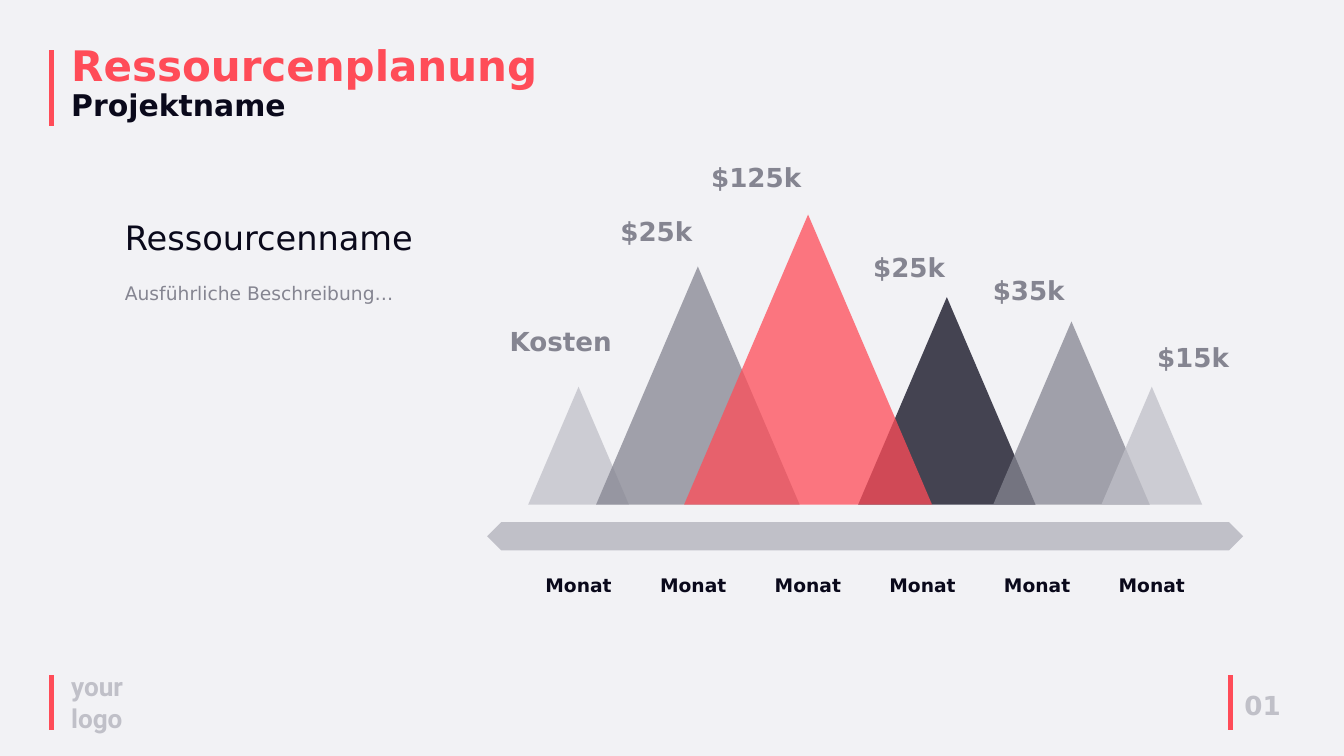
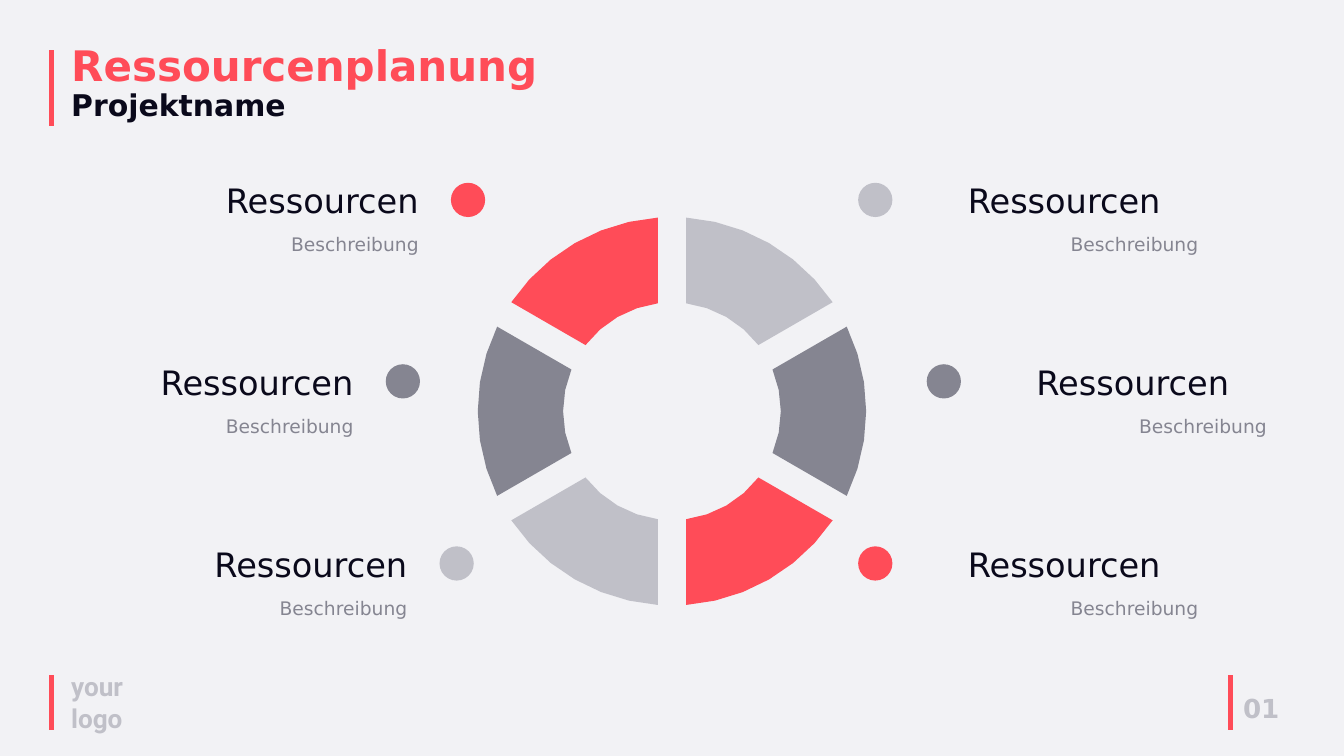
from dataclasses import dataclass
from math import asin, cos, degrees, radians, sin

from lxml.etree import SubElement
from pptx import Presentation
from pptx.dml.color import RGBColor
from pptx.enum.shapes import MSO_CONNECTOR, MSO_SHAPE as Shape
from pptx.enum.text import MSO_ANCHOR as Anchor, MSO_AUTO_SIZE as AutoSize, PP_ALIGN as Align
from pptx.oxml.ns import qn
from pptx.util import Inches, Pt


@dataclass(frozen=True)
class Theme:
    paper: str = "F2F2F5"
    coral: str = "FF4C58"
    ink: str = "0A091B"
    slate: str = "858591"
    silver: str = "C0C0C8"
    font: str = "DejaVu Sans"
    logo_font: str = "Roboto"
    title: int = 45
    heading: int = 36
    subtitle: int = 32
    label: int = 28
    body: int = 20
    rule_width: int = 5


THEME = Theme()
TITLE_ONLY = 5


@dataclass(frozen=True)
class Peak:
    left: float
    width: float
    color: str
    cost: str
    cost_left: float
    cost_top: float
    cost_width: float = 1.75
    cost_align: Align = Align.RIGHT


PEAKS = [
    Peak(7.86, 1.5, THEME.silver, "Kosten", 6.82, 4.79, cost_width=2.38),
    Peak(8.87, 3.03, THEME.slate, "$25k", 8.65, 3.15),
    Peak(12.77, 2.64, THEME.ink, "$25k", 12.41, 3.69),
    Peak(14.78, 2.33, THEME.slate, "$35k", 14.19, 4.03),
    Peak(16.39, 1.5, THEME.silver, "$15k", 17.12, 5.03, cost_align=Align.LEFT),
    Peak(10.18, 3.69, THEME.coral, "$125k", 10.27, 2.35),
]
PEAK_BASE = 7.51
PEAK_SLOPE = 1.17  # height per unit of width
MONTH_COUNT = 6
MONTH_FIRST, MONTH_LAST = 7.86, 16.39

RING_CENTER = (10, 6.12)
RING_OUTER, RING_INNER = 2.89, 1.62
RING_HALF_GAP = 0.21
RING_COLORS = [THEME.slate, THEME.silver, THEME.coral] * 2  # anticlockwise from the right

CALLOUT_ROWS = [  # dot top, then dot left and colour on either side
    (2.72, (6.71, THEME.coral), (12.77, THEME.silver)),
    (5.42, (5.74, THEME.slate), (13.79, THEME.slate)),
    (8.13, (6.54, THEME.silver), (12.77, THEME.coral)),
]


def set_values(target, values):
    for name, value in values.items():
        setattr(target, name, value)


def add_run(paragraph, text, size, color, bold=False, font=THEME.font):
    run = paragraph.add_run()
    run.text = text
    set_values(run.font, {"name": font, "size": Pt(size), "bold": bold})
    run.font.color.rgb = RGBColor.from_string(color)


def add_text(shapes, text, box, size, color, align=Align.LEFT, **style):
    frame = shapes.add_textbox(*map(Inches, box)).text_frame
    set_values(frame, {"word_wrap": True, "auto_size": AutoSize.SHAPE_TO_FIT_TEXT})
    paragraph = frame.paragraphs[0]
    paragraph.alignment = align
    add_run(paragraph, text, size, color, **style)


def paint(shape, color, opacity=None):
    """Fill a shape without outline or shadow; opacity is in percent."""
    shape.shadow.inherit = False
    shape.line.fill.background()
    shape.fill.solid()
    shape.fill.fore_color.rgb = RGBColor.from_string(color)
    if opacity is not None:
        rgb = shape._element.spPr.find(f"{qn('a:solidFill')}/{qn('a:srgbClr')}")
        SubElement(rgb, qn("a:alpha")).set("val", str(opacity * 1000))


def add_preset(shapes, preset, box, color, opacity=None):
    shape = shapes.add_shape(preset, *map(Inches, box))
    paint(shape, color, opacity)
    return shape


def add_rule(shapes, x, top, bottom):
    rule = shapes.add_connector(MSO_CONNECTOR.STRAIGHT, *map(Inches, (x, top, x, bottom)))
    rule.line.width = Pt(THEME.rule_width)
    rule.line.color.rgb = RGBColor.from_string(THEME.coral)
    SubElement(rule._element.spPr, qn("a:effectLst"))


def add_title(slide, title, subtitle):
    heading = slide.shapes.title
    set_values(heading, {"left": Inches(0.96), "top": Inches(0.62),
                         "width": Inches(7.38), "height": Inches(1.27)})
    set_values(heading.text_frame, {"word_wrap": True, "vertical_anchor": Anchor.MIDDLE,
                                    "auto_size": AutoSize.SHAPE_TO_FIT_TEXT})
    paragraph = heading.text_frame.paragraphs[0]
    set_values(paragraph, {"alignment": Align.LEFT, "line_spacing": 0.9})
    add_run(paragraph, title, THEME.title, THEME.coral, bold=True)
    paragraph.add_line_break()
    add_run(paragraph, subtitle, THEME.subtitle, THEME.ink, bold=True)


def add_base_slide(deck, number_left, number_top):
    """Add a slide with the title, the coral rules and the footer."""
    slide = deck.slides.add_slide(deck.slide_layouts[TITLE_ONLY])
    shapes = slide.shapes
    for x, top, bottom in [(0.77, 0.75, 1.88), (0.77, 10.05, 10.86), (18.31, 10.05, 10.86)]:
        add_rule(shapes, x, top, bottom)
    add_text(shapes, "your logo", (0.96, 9.93, 1.19, 1.04), THEME.label, THEME.silver,
             bold=True, font=THEME.logo_font)
    add_title(slide, "Ressourcenplanung", "Projektname")
    add_text(shapes, "01", (number_left, number_top, 1.9, 0.57), THEME.label, THEME.silver,
             bold=True)
    return slide


def add_resource_intro(slide):
    intro = slide.shapes.add_group_shape().shapes
    add_text(intro, "Ressourcenname", (1.76, 3.18, 5.08, 0.71), THEME.heading, THEME.ink)
    add_text(intro, "Ausführliche Beschreibung…", (1.76, 4.15, 5.08, 0.44),
             THEME.body, THEME.slate)


def add_cost_peaks(slide):
    peaks = slide.shapes.add_group_shape().shapes
    timeline = add_preset(peaks, Shape.SNIP_2_SAME_RECTANGLE, (7.25, 7.77, 11.25, 0.42),
                          THEME.silver)
    for corner in range(2):
        timeline.adjustments[corner] = 0.5
    month_pitch = (MONTH_LAST - MONTH_FIRST) / (MONTH_COUNT - 1)
    for month in range(MONTH_COUNT):
        add_text(peaks, "Monat", (MONTH_FIRST + month * month_pitch, 8.49, 1.5, 0.44),
                 THEME.body, THEME.ink, Align.CENTER, bold=True)
    for peak in PEAKS:
        height = peak.width * PEAK_SLOPE
        add_preset(peaks, Shape.ISOSCELES_TRIANGLE,
                   (peak.left, PEAK_BASE - height, peak.width, height), peak.color, opacity=75)
    for peak in PEAKS:
        add_text(peaks, peak.cost, (peak.cost_left, peak.cost_top, peak.cost_width, 0.57),
                 THEME.label, THEME.slate, peak.cost_align, bold=True)


def ring_arc(radius, middle, steps):
    """Points along one segment's arc, shortened so that the gaps stay parallel."""
    half = 30 - degrees(asin(RING_HALF_GAP / radius))
    angles = [radians(middle - half + 2 * half * step / steps) for step in range(steps + 1)]
    x, y = RING_CENTER
    return [(Inches(x + radius * cos(a)), Inches(y - radius * sin(a))) for a in angles]


def add_ring(slide):
    ring = slide.shapes.add_group_shape().shapes
    for index, color in enumerate(RING_COLORS):
        middle = 60 * index
        outer, inner = ring_arc(RING_OUTER, middle, 6), ring_arc(RING_INNER, middle, 4)
        start, *rest = outer + inner[::-1]
        outline = ring.build_freeform(*start)
        outline.add_line_segments(rest, close=True)
        paint(outline.convert_to_shape(), color)


def add_callout(slide, dot_left, dot_top, color, on_left):
    callout = slide.shapes.add_group_shape().shapes
    add_preset(callout, Shape.OVAL, (dot_left, dot_top, 0.51, 0.51), color)
    for text, width, height, drop, size, ink in [
        ("Ressourcen", 3.54, 0.71, -0.09, THEME.heading, THEME.ink),
        ("Beschreibung", 4.1, 0.44, 0.7, THEME.body, THEME.slate),
    ]:
        left = dot_left - 0.38 - width if on_left else dot_left + 1.06
        add_text(callout, text, (left, dot_top + drop, width, height), size, ink, Align.RIGHT)


def add_callouts(slide):
    for dot_top, left_side, right_side in CALLOUT_ROWS:
        for side in (left_side, right_side):
            add_callout(slide, side[0], dot_top, side[1], on_left=side is left_side)


def main():
    deck = Presentation()
    set_values(deck, {"slide_width": Inches(20), "slide_height": Inches(11.25)})
    backdrop = deck.slide_master.background.fill
    backdrop.solid()
    backdrop.fore_color.rgb = RGBColor.from_string(THEME.paper)

    costs = add_base_slide(deck, 18.42, 10.21)
    add_resource_intro(costs)
    add_cost_peaks(costs)

    resources = add_base_slide(deck, 18.4, 10.26)
    add_ring(resources)
    add_callouts(resources)

    deck.save("out.pptx")


if __name__ == "__main__":
    main()
